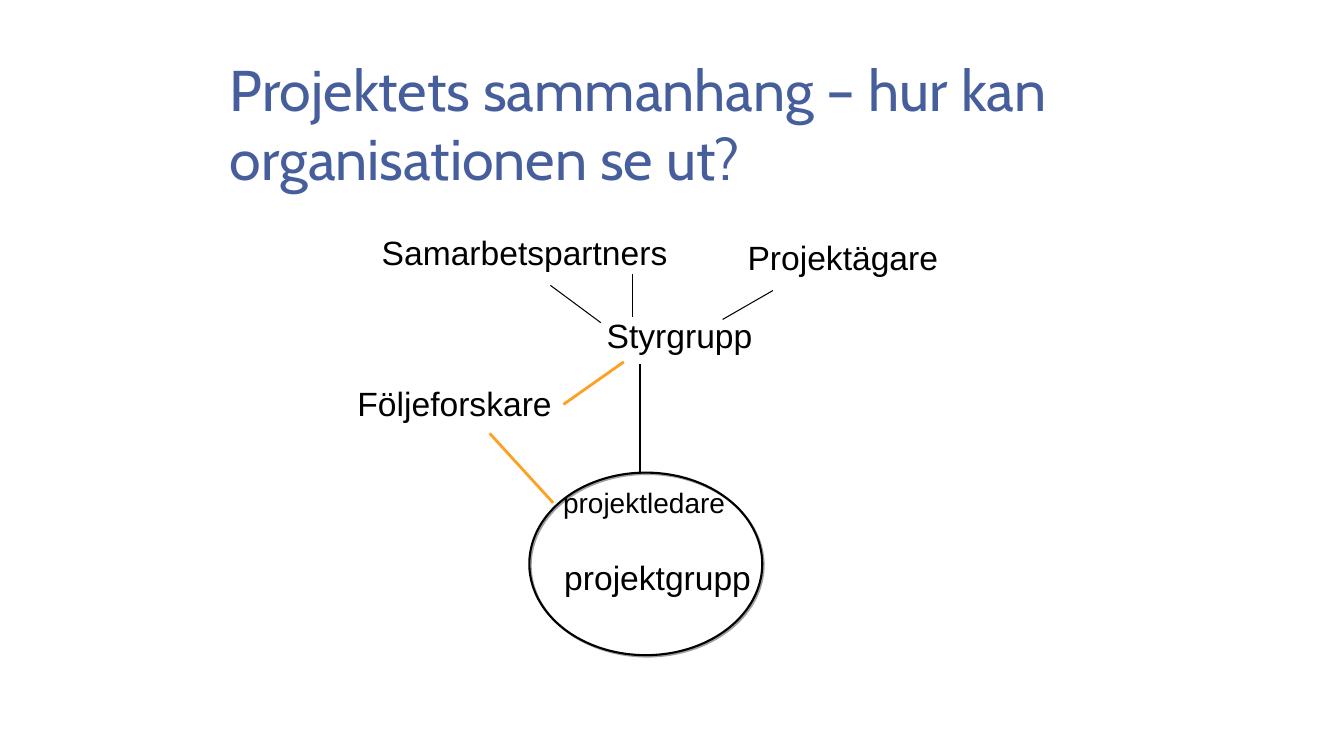
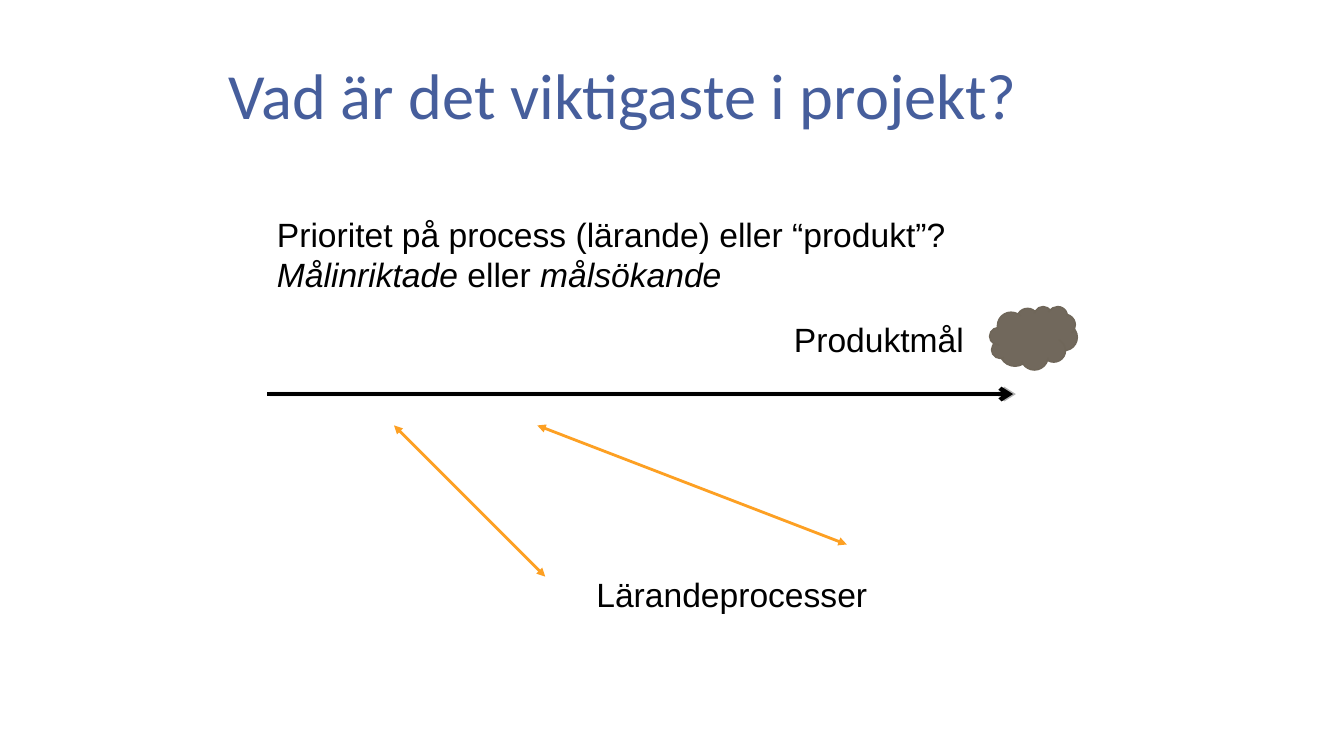
"""Build two slides on project organisation and project priorities."""
from lxml.etree import SubElement
from pptx import Presentation
from pptx.dml.color import RGBColor
from pptx.enum.shapes import MSO_CONNECTOR, MSO_SHAPE
from pptx.enum.text import MSO_ANCHOR, MSO_AUTO_SIZE, PP_ALIGN
from pptx.oxml.ns import qn
from pptx.util import Cm, Pt

BLACK, BLUE, ORANGE = "000000", "465E9C", "FDA023"
CLOUD_FILL, CLOUD_EDGE, SHADOW = "71685C", "6F6659", "808080"


def color(value):
    """Turn a hex string into a colour."""
    return RGBColor.from_string(value)


def cast_shadow(effects, opacity, distance, angle):
    """Add a hard grey shadow to an effect list."""
    shadow = SubElement(effects, qn("a:outerShdw"), blurRad="0", dist=str(Pt(distance)),
                        dir=str(angle * 60000), algn="ctr", rotWithShape="0")
    tint = SubElement(shadow, qn("a:srgbClr"), val=SHADOW)
    SubElement(tint, qn("a:alpha"), val=str(opacity * 1000))


class Deck:
    """Hold the shared style and the current slide."""

    def __init__(self):
        """Start an empty widescreen presentation."""
        self.presentation = Presentation()
        self.presentation.slide_width = Cm(33.87)
        self.presentation.slide_height = Cm(19.05)
        self.slide = None

    def start_slide(self, heading, left, top, size, font):
        """Add a slide with a styled title."""
        self.slide = self.presentation.slides.add_slide(self.presentation.slide_layouts[5])
        title = self.slide.shapes.title
        title.left, title.top, title.width, title.height = Cm(left), Cm(top), Cm(21.16), Cm(3.18)
        frame = title.text_frame
        frame.text = heading
        frame.word_wrap = True
        frame.auto_size = MSO_AUTO_SIZE.NONE
        frame.vertical_anchor = MSO_ANCHOR.MIDDLE
        frame.paragraphs[0].alignment = PP_ALIGN.LEFT
        self.style_run(frame.paragraphs[0].runs[0], size, font, BLUE)

    def style_run(self, run, size, font="Arial", tint=BLACK):
        """Apply font, size and colour to a run."""
        run.font.name = font
        run.font.size = Pt(size)
        run.font.color.rgb = color(tint)

    def label(self, text, left, top, width, height=1.3, size=24, italics=()):
        """Add an unwrapped label; a line may be a tuple of pieces."""
        box = self.slide.shapes.add_textbox(Cm(left), Cm(top), Cm(width), Cm(height))
        frame = box.text_frame
        frame.word_wrap = False
        frame.auto_size = MSO_AUTO_SIZE.SHAPE_TO_FIT_TEXT
        lines = [(text,)] if isinstance(text, str) else text
        for number, pieces in enumerate(lines):
            paragraph = frame.add_paragraph() if number else frame.paragraphs[0]
            for piece in pieces:
                run = paragraph.add_run()
                run.text = piece
                self.style_run(run, size)
                if piece in italics:
                    run.font.italic = True

    def line(self, start, end, width, tint=BLACK, head=None, tail=None, shadow=None):
        """Draw a straight line with optional arrowheads and shadow."""
        connector = self.slide.shapes.add_connector(
            MSO_CONNECTOR.STRAIGHT, *map(Cm, start), *map(Cm, end))
        connector.line.color.rgb = color(tint)
        connector.line.width = Pt(width)
        outline = connector.line._get_or_add_ln()
        for tag, arrow in (("a:headEnd", head), ("a:tailEnd", tail)):
            if arrow:
                SubElement(outline, qn(tag), type=arrow)
        effects = SubElement(connector._element.spPr, qn("a:effectLst"))
        if shadow:
            cast_shadow(effects, *shadow)

    def figure(self, preset, box, edge, width, fill=None, shadow=None):
        """Draw a preset shape, hollow unless a fill is given."""
        shape = self.slide.shapes.add_shape(preset, *map(Cm, box))
        if fill:
            shape.fill.solid()
            shape.fill.fore_color.rgb = color(fill)
        else:
            shape.fill.background()
        shape.line.color.rgb = color(edge)
        shape.line.width = Pt(width)
        shape.shadow.inherit = False
        if shadow:
            cast_shadow(shape._element.spPr.find(qn("a:effectLst")), *shadow)


def organisation_slide(deck):
    """Show how the groups around a project connect."""
    deck.start_slide("Projektets sammanhang – hur kan organisationen se ut?", 5.54, 1.52, 41, "Cabin")
    deck.figure(MSO_SHAPE.OVAL, (13.34, 11.91, 5.87, 4.6), BLACK, 1.5, shadow=(75, 1.4, 45))
    deck.line((16.13, 9.17), (16.13, 11.94), 2)
    for start, end in (((15.14, 8.13), (13.87, 7.19)),
                       ((15.93, 7.98), (15.93, 6.91)),
                       ((18.21, 8.05), (19.48, 7.32))):
        deck.line(start, end, 0.75)
    for role, left, top, width in (("Styrgrupp", 15.04, 7.82, 4.22),
                                   ("Projektägare", 18.59, 5.84, 5.36),
                                   ("Samarbetspartners", 9.37, 5.72, 7.77),
                                   ("projektgrupp", 13.97, 13.92, 5.26),
                                   ("Följeforskare", 8.76, 9.53, 5.46)):
        deck.label(role, left, top, width)
    deck.label("projektledare", 13.94, 12.12, 4.62, 1.12, size=20)
    deck.line((14.2, 10.19), (15.72, 9.12), 2, ORANGE)
    deck.line((12.34, 10.92), (13.94, 12.67), 2, ORANGE)


def priority_slide(deck):
    """Contrast the product goal with learning processes."""
    deck.start_slide("Vad är det viktigaste i projekt?", 5.51, 0.76, 46, "Calibri")
    deck.line((6.73, 9.93), (25.53, 9.93), 3, tail="arrow", shadow=(60, 2, 0))
    for start, end in (((9.93, 10.72), (13.74, 14.53)), ((13.54, 10.72), (21.34, 13.72))):
        deck.line(start, end, 2, ORANGE, head="triangle", tail="triangle")
    deck.figure(MSO_SHAPE.CLOUD, (24.94, 7.72, 2.21, 1.6), CLOUD_EDGE, 1, CLOUD_FILL)
    deck.label("Produktmål", 19.76, 7.92, 4.83)
    deck.label("Lärandeprocesser", 14.78, 14.33, 7.42)
    deck.label([("Prioritet på process (lärande) eller “produkt”?",),
                ("Målinriktade ", "eller ", "målsökande")],
               6.73, 5.26, 17.53, 2.31, italics=("Målinriktade ", "målsökande"))


def main():
    """Build and save the presentation."""
    deck = Deck()
    organisation_slide(deck)
    priority_slide(deck)
    deck.presentation.save("out.pptx")


if __name__ == "__main__":
    main()
